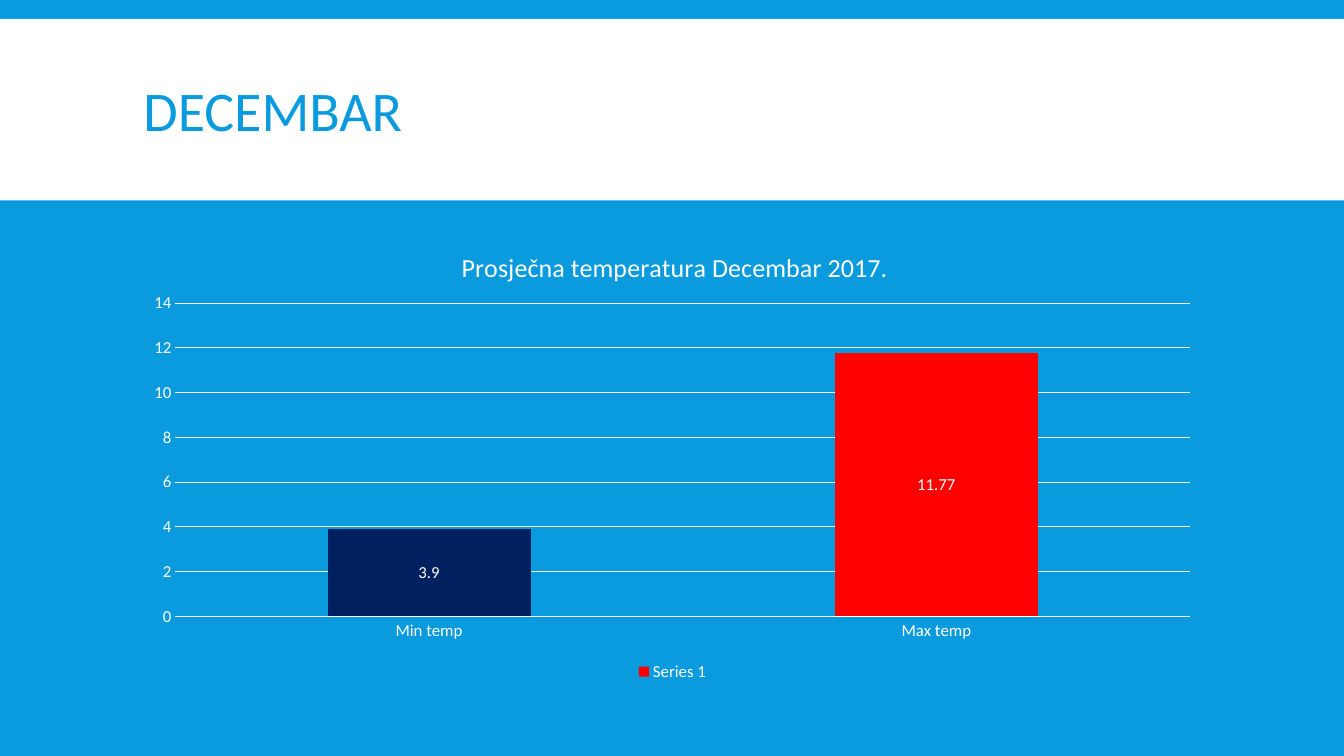
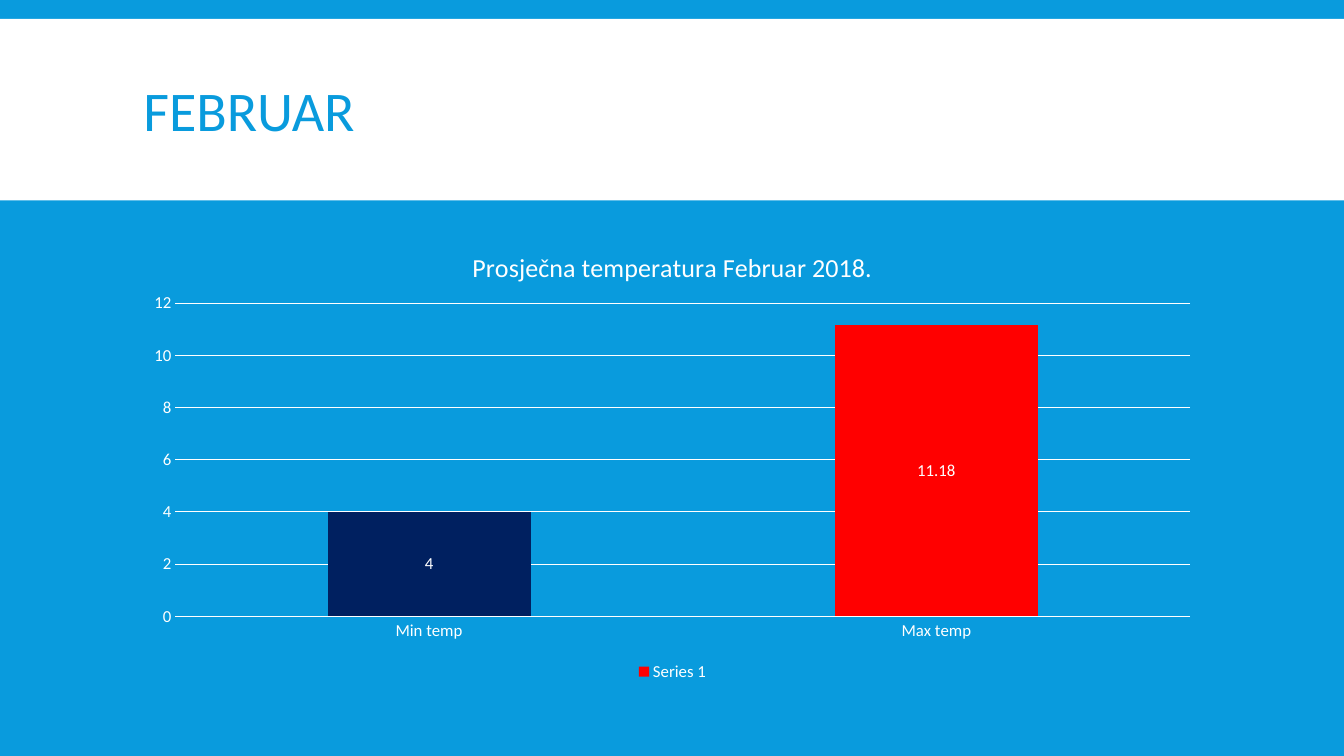
import dataclasses

import pptx
import pptx.chart.chart
import pptx.chart.data
import pptx.dml.color
import pptx.enum.chart
import pptx.enum.shapes
import pptx.enum.text
import pptx.oxml
import pptx.oxml.ns
import pptx.presentation
import pptx.slide
import pptx.util

EMU_PER_PX = 9525
SLIDE_WIDTH, SLIDE_HEIGHT = 1280, 720
CONTENT_LEFT, CONTENT_WIDTH = 127, 1027

FONT = "Calibri"
BLUE = "099BDD"
WHITE = "FFFFFF"
NAVY = "002060"
RED = "FF0000"


@dataclasses.dataclass(frozen=True)
class Box:
    left: int
    top: int
    width: int
    height: int

    def emu(self) -> tuple[int, int, int, int]:
        return px(self.left), px(self.top), px(self.width), px(self.height)


@dataclasses.dataclass(frozen=True)
class Month:
    title: str
    chart_title: str
    chart_title_x: float
    minimum: float
    maximum: float


BAND = Box(0, 18, SLIDE_WIDTH, 173)
TITLE = Box(CONTENT_LEFT, 30, CONTENT_WIDTH, 158)
CHART = Box(CONTENT_LEFT, 211, CONTENT_WIDTH, 442)

MONTHS = [
    Month("DECEMBAR", "Prosječna temperatura Decembar 2017.", 0.3, 3.9, 11.77),
    Month("FEBRUAR", "Prosječna temperatura Februar 2018.", 0.31, 4, 11.18),
]


def px(length: int) -> int:
    return pptx.util.Emu(length * EMU_PER_PX)


def rgb(value: str) -> pptx.dml.color.RGBColor:
    return pptx.dml.color.RGBColor.from_string(value)


def fill_solid(fill, color: str) -> None:
    fill.solid()
    fill.fore_color.rgb = rgb(color)


def style_font(font, size: float, color: str = WHITE) -> None:
    font.name = FONT
    font.size = pptx.util.Pt(size)
    font.bold = False
    font.color.rgb = rgb(color)


def set_layout(parent, index: int, **values: str | float) -> None:
    """Place a chart part by fractions of the chart area."""
    layout = parent.find(pptx.oxml.ns.qn("c:layout"))
    if layout is not None:
        parent.remove(layout)
    settings = "".join(f'<c:{name} val="{value}"/>' for name, value in values.items())
    namespace = pptx.oxml.ns.nsdecls("c")
    parent.insert(index, pptx.oxml.parse_xml(
        f"<c:layout {namespace}><c:manualLayout>{settings}</c:manualLayout></c:layout>"))


def add_band(slide: pptx.slide.Slide) -> None:
    band = slide.shapes.add_shape(pptx.enum.shapes.MSO_SHAPE.RECTANGLE, *BAND.emu())
    band.shadow.inherit = False
    fill_solid(band.fill, WHITE)
    band.line.fill.background()
    slide.shapes.element.insert(2, band.element)


def set_title(slide: pptx.slide.Slide, text: str) -> None:
    title = slide.shapes.title
    title.left, title.top, title.width, title.height = TITLE.emu()
    title.text_frame.text = text
    title.text_frame.vertical_anchor = pptx.enum.text.MSO_ANCHOR.MIDDLE
    paragraph = title.text_frame.paragraphs[0]
    paragraph.alignment = pptx.enum.text.PP_ALIGN.LEFT
    paragraph.line_spacing = 0.85
    style_font(paragraph.runs[0].font, 40, BLUE)


def style_axes(chart: pptx.chart.chart.Chart) -> None:
    for axis in (chart.category_axis, chart.value_axis):
        axis.major_tick_mark = pptx.enum.chart.XL_TICK_MARK.NONE
        axis.minor_tick_mark = pptx.enum.chart.XL_TICK_MARK.NONE
        axis.format.line.fill.background()
        style_font(axis.tick_labels.font, 12)
    gridline = chart.value_axis.major_gridlines.format.line
    gridline.color.rgb = rgb(WHITE)
    gridline.width = pptx.util.Pt(0.75)


def style_columns(chart: pptx.chart.chart.Chart) -> None:
    plot = chart.plots[0]
    plot.gap_width = 150
    plot.vary_by_categories = False
    series = plot.series[0]
    fill_solid(series.format.fill, RED)
    fill_solid(series.points[0].format.fill, NAVY)
    labels = series.data_labels
    labels.show_value = True
    labels.position = pptx.enum.chart.XL_LABEL_POSITION.CENTER
    style_font(labels.font, 12)


def set_chart_title(chart: pptx.chart.chart.Chart, text: str, x: float) -> None:
    chart.has_title = True
    frame = chart.chart_title.text_frame
    frame.text = text
    style_font(frame.paragraphs[0].runs[0].font, 18.6)
    set_layout(chart.chart_title._element, 1, xMode="edge", yMode="edge", x=x, y=0.05)


def add_temperature_chart(slide: pptx.slide.Slide, month: Month) -> None:
    data = pptx.chart.data.CategoryChartData()
    data.categories = ["Min temp", "Max temp"]
    data.add_series("Series 1", [month.minimum, month.maximum])
    chart = slide.shapes.add_chart(
        pptx.enum.chart.XL_CHART_TYPE.COLUMN_CLUSTERED, *CHART.emu(), data).chart
    style_font(chart.font, 10)
    set_chart_title(chart, month.chart_title, month.chart_title_x)
    style_axes(chart)
    style_columns(chart)
    chart.has_legend = True
    chart.legend.position = pptx.enum.chart.XL_LEGEND_POSITION.BOTTOM
    chart.legend.include_in_layout = False
    style_font(chart.legend.font, 12)
    plot_area = chart._chartSpace.chart.plotArea
    set_layout(plot_area, 0, layoutTarget="inner", xMode="edge", yMode="edge",
               x=0.039, y=0.176, w=0.941, h=0.675)


def add_month_slide(presentation: pptx.presentation.Presentation, month: Month) -> None:
    slide = presentation.slides.add_slide(presentation.slide_layouts.get_by_name("Title Only"))
    add_band(slide)
    set_title(slide, month.title)
    add_temperature_chart(slide, month)


def main() -> None:
    presentation = pptx.Presentation()
    presentation.slide_width = px(SLIDE_WIDTH)
    presentation.slide_height = px(SLIDE_HEIGHT)
    fill_solid(presentation.slide_master.background.fill, BLUE)
    for month in MONTHS:
        add_month_slide(presentation, month)
    presentation.save("out.pptx")


if __name__ == "__main__":
    main()
